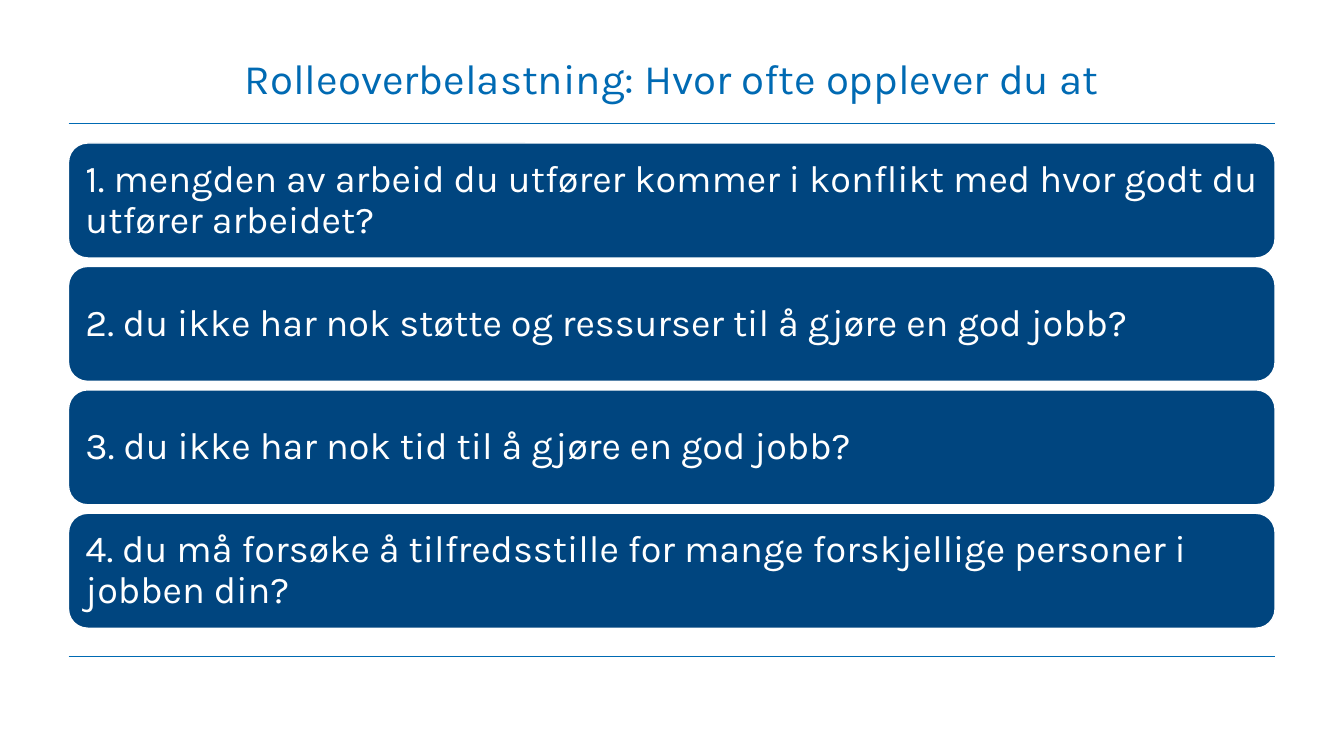
from lxml import etree
from pptx import Presentation
from pptx.dml.color import RGBColor
from pptx.enum.shapes import MSO_CONNECTOR, MSO_SHAPE
from pptx.enum.text import MSO_ANCHOR, MSO_AUTO_SIZE, PP_ALIGN
from pptx.oxml.ns import qn
from pptx.util import Pt

STRAIGHT = MSO_CONNECTOR.STRAIGHT
ROUNDED = MSO_SHAPE.ROUNDED_RECTANGLE
TOP, MIDDLE = MSO_ANCHOR.TOP, MSO_ANCHOR.MIDDLE
LEFT, CENTER = PP_ALIGN.LEFT, PP_ALIGN.CENTER
NO_FIT = MSO_AUTO_SIZE.NONE

BLUE = RGBColor(0x00, 0x6A, 0xB3)
NAVY = RGBColor(0x00, 0x45, 0x7F)
WHITE = RGBColor(0xFF, 0xFF, 0xFF)

MARGIN = 48.96
WIDTH = 861.84
CARD_TOP = 102.2
CARD_HEIGHT = 82.08
CARD_PITCH = 88.15

TITLE = "Rolleoverbelastning: Hvor ofte opplever du at"
QUESTIONS = (
    "1. mengden av arbeid du utfører kommer i konflikt med hvor godt du utfører arbeidet?",
    "2. du ikke har nok støtte og ressurser til å gjøre en god jobb?",
    "3. du ikke har nok tid til å gjøre en god jobb?",
    "4. du må forsøke å tilfredsstille for mange forskjellige personer i jobben din?",
)


def apply(target, values):
    """Set each attribute of the target from a dict."""
    for name, value in values.items():
        setattr(target, name, value)


class SlideBuilder:
    """Hold the text style and the current slide."""

    font = "Karla"
    line_spacing = 0.9

    def __init__(self, page):
        """Keep the slide to draw on."""
        self.page = page

    def label(self, shape, text, size, color, align, anchor, inset):
        """Put one formatted paragraph into a shape."""
        frame = shape.text_frame
        frame.text = text
        apply(frame, {
            "word_wrap": True, "auto_size": NO_FIT, "vertical_anchor": anchor,
            "margin_left": inset, "margin_right": inset,
            "margin_top": inset, "margin_bottom": inset,
        })
        para = frame.paragraphs[0]
        apply(para, {"alignment": align, "line_spacing": self.line_spacing})
        span = para.runs[0]
        apply(span.font, {"name": self.font, "size": Pt(size), "bold": False})
        span.font.color.rgb = color

    def title(self, text, top, height):
        """Place and fill the title placeholder."""
        box = self.page.shapes.title
        apply(box, {"left": Pt(MARGIN), "top": Pt(top),
                    "width": Pt(WIDTH), "height": Pt(height)})
        self.label(box, text, 30, BLUE, CENTER, TOP, Pt(3.6))

    def rule(self, top, weight):
        """Draw a horizontal line between the margins."""
        line = self.page.shapes.add_connector(
            STRAIGHT, Pt(MARGIN), Pt(top), Pt(MARGIN + WIDTH), Pt(top))
        line.line.color.rgb = BLUE
        line.line.width = Pt(weight)
        etree.SubElement(line._element.spPr, qn("a:effectLst"))

    def card(self, text, top):
        """Draw a rounded card with a question."""
        box = self.page.shapes.add_shape(
            ROUNDED, Pt(MARGIN), Pt(top), Pt(WIDTH), Pt(CARD_HEIGHT))
        box.shadow.inherit = False
        box.fill.solid()
        box.fill.fore_color.rgb = NAVY
        box.line.color.rgb = WHITE
        box.line.width = Pt(1)
        self.label(box, text, 27, WHITE, LEFT, MIDDLE, Pt(8.1))


def main():
    """Build the slide and save it."""
    deck = Presentation()
    apply(deck, {"slide_width": Pt(960), "slide_height": Pt(540)})
    builder = SlideBuilder(deck.slides.add_slide(deck.slide_layouts[5]))
    builder.rule(468.7, 0.5)
    builder.rule(88.4, 0.75)
    builder.title(TITLE, 38.2, 50.4)
    for index, question in enumerate(QUESTIONS):
        builder.card(question, CARD_TOP + index * CARD_PITCH)
    deck.save("out.pptx")


if __name__ == "__main__":
    main()
